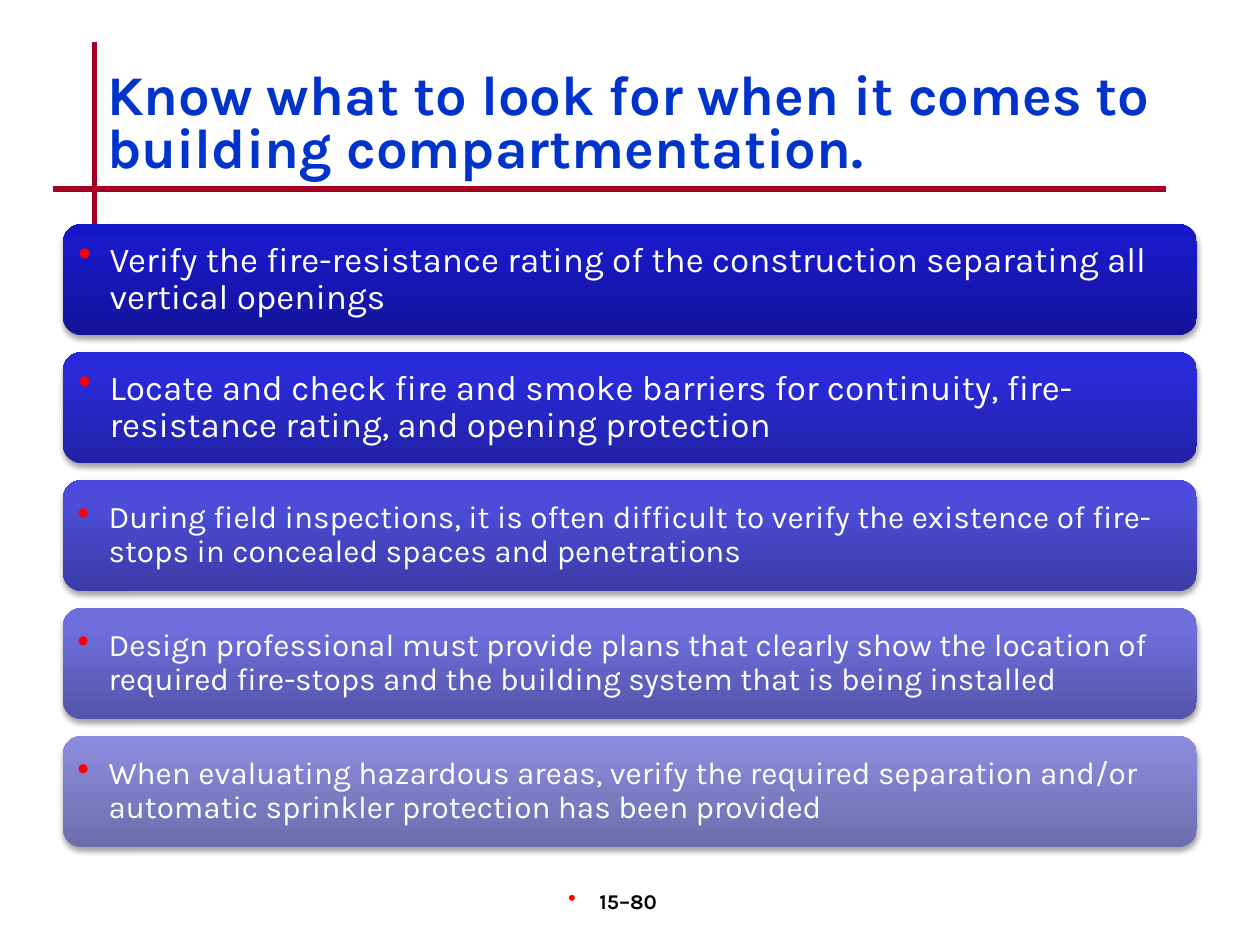
"""Build the slide on what to check in building compartmentation."""
from copy import deepcopy
from dataclasses import dataclass

from lxml import etree
from pptx import Presentation
from pptx import util as u
from pptx.dml.color import RGBColor
from pptx.enum import shapes, text
from pptx.oxml import ns


@dataclass(frozen=True)
class Theme:
    """Colours, font and type sizes of the slide."""
    font: str = "Karla"
    rule: str = "A50021"
    title: str = "0033CC"
    bullet: str = "FF0000"
    card_text: str = "FFFFFF"
    number: str = "000000"
    shadow: str = "000000"
    title_size: int = 32
    large_size: int = 20
    small_size: int = 18
    number_size: int = 12
    card_fills: tuple = (
        ("13139A", "1919C8", "1515CC"),
        ("2121A7", "2A2AD9", "2727DD"),
        ("3B3BA8", "4D4DDA", "4A4ADE"),
        ("5454AA", "6E6EDC", "6C6CDF"),
        ("6D6DAC", "8D8DE0", "8C8CE2"),
    )


THEME = Theme()
CHECKS = (
    ("Verify the fire-resistance rating of the construction separating all "
     "vertical openings", THEME.large_size),
    ("Locate and check fire and smoke barriers for continuity, "
     "fire-resistance rating, and opening protection", THEME.large_size),
    ("During field inspections, it is often difficult to verify the existence "
     "of fire-stops in concealed spaces and penetrations", THEME.small_size),
    ("Design professional must provide plans that clearly show the location of "
     "required fire-stops and the building system that is being installed",
     THEME.small_size),
    ("When evaluating hazardous areas, verify the required separation and/or "
     "automatic sprinkler protection has been provided", THEME.small_size),
)
CARD_LEFT, CARD_TOP, CARD_WIDTH, CARD_HEIGHT = 1.27, 4.52, 22.86, 2.24
CARD_STEP = 2.58
CARD_PADDING = 0.11


def add_child(parent, tag, **attributes):
    """Append a DrawingML element and return it."""
    child = etree.SubElement(parent, ns.qn(tag))
    for name, value in attributes.items():
        child.set(name, str(value))
    return child


def add_bullet(paragraph):
    """Give the paragraph a red hanging bullet."""
    indent = u.Cm(0.63)
    properties = paragraph._p.get_or_add_pPr()
    properties.set("marL", str(indent))
    properties.set("indent", str(-indent))
    colour = add_child(properties, "a:buClr")
    add_child(colour, "a:srgbClr", val=THEME.bullet)
    add_child(properties, "a:buSzPct", val=110000)
    add_child(properties, "a:buChar", char="•")


def add_text(slide, words, box, *, size, colour, bold=False, bullet=False,
             spacing=1.0, align=text.PP_ALIGN.LEFT,
             anchor=text.MSO_ANCHOR.TOP, insets=(0.25, 0.13, 0.25, 0.13)):
    """Place one formatted paragraph in a box given in centimetres."""
    frame = slide.shapes.add_textbox(*map(u.Cm, box)).text_frame
    frame.word_wrap = True
    frame.vertical_anchor = anchor
    (frame.margin_left, frame.margin_top,
     frame.margin_right, frame.margin_bottom) = map(u.Cm, insets)
    paragraph = frame.paragraphs[0]
    paragraph.text = words
    if bullet:
        add_bullet(paragraph)
    paragraph.alignment = align
    paragraph.line_spacing = spacing
    font = paragraph.runs[0].font
    font.name = THEME.font
    font.size = u.Pt(size)
    font.bold = bold
    font.color.rgb = RGBColor.from_string(colour)


def add_rule(slide, *ends):
    """Draw a straight title rule between two points."""
    rule = slide.shapes.add_connector(
        shapes.MSO_CONNECTOR.STRAIGHT, *map(u.Cm, ends))
    rule.line.color.rgb = RGBColor.from_string(THEME.rule)
    rule.line.width = u.Pt(3)
    add_child(rule._element.spPr, "a:effectLst")


def fill_gradient(card, colours, positions):
    """Fill the card with colours rising from its bottom edge."""
    card.fill.gradient()
    card.fill.gradient_angle = 90
    stop_list = card._element.spPr.find(".//" + ns.qn("a:gsLst"))
    stop_list.append(deepcopy(stop_list[-1]))
    for stop, colour, position in zip(
            card.fill.gradient_stops, colours, positions):
        stop.color.rgb = RGBColor.from_string(colour)
        stop.position = position


def add_shadow(card):
    """Give the card a soft shadow straight below it."""
    card.shadow.inherit = False
    effects = card._element.spPr.find(ns.qn("a:effectLst"))
    shadow = add_child(effects, "a:outerShdw", blurRad=u.Pt(3.1),
                       dist=u.Pt(1.8), dir=5400000, rotWithShape=0)
    colour = add_child(shadow, "a:srgbClr", val=THEME.shadow)
    add_child(colour, "a:alpha", val=35000)


def add_card(slide, row, words, size):
    """Add one check as a rounded card in the given row."""
    top = CARD_TOP + row * CARD_STEP
    card = slide.shapes.add_shape(
        shapes.MSO_SHAPE.ROUNDED_RECTANGLE,
        *map(u.Cm, (CARD_LEFT, top, CARD_WIDTH, CARD_HEIGHT)))
    last = row == len(CHECKS) - 1
    fill_gradient(card, THEME.card_fills[row], (0, 1 if last else 0.8, 1))
    card.line.fill.background()
    add_shadow(card)
    inset = size / 100
    add_text(slide, words,
             (CARD_LEFT + CARD_PADDING, top + CARD_PADDING,
              CARD_WIDTH - 2 * CARD_PADDING, CARD_HEIGHT - 2 * CARD_PADDING),
             size=size, colour=THEME.card_text, bullet=True, spacing=0.9,
             anchor=text.MSO_ANCHOR.MIDDLE, insets=(inset,) * 4)


def main():
    """Build and save the slide."""
    deck = Presentation()
    deck.slide_width, deck.slide_height = u.Cm(25.4), u.Cm(19.05)
    slide = deck.slides.add_slide(deck.slide_layouts[6])
    add_rule(slide, 1.91, 0.84, 1.91, 4.65)
    add_rule(slide, 1.07, 3.81, 23.5, 3.81)
    add_text(slide, "15–80", (9.96, 17.78, 5.28, 1.27),
             size=THEME.number_size, colour=THEME.number, bold=True,
             bullet=True, align=text.PP_ALIGN.CENTER,
             insets=(0, 0.13, 0.5, 0.13))
    add_text(slide, "Know what to look for when it comes to "
             "building compartmentation.", (1.91, 1.27, 22.02, 2.54),
             size=THEME.title_size, colour=THEME.title, bold=True,
             spacing=0.8, anchor=text.MSO_ANCHOR.MIDDLE)
    for row, (words, size) in enumerate(CHECKS):
        add_card(slide, row, words, size)
    deck.save("out.pptx")


if __name__ == "__main__":
    main()
